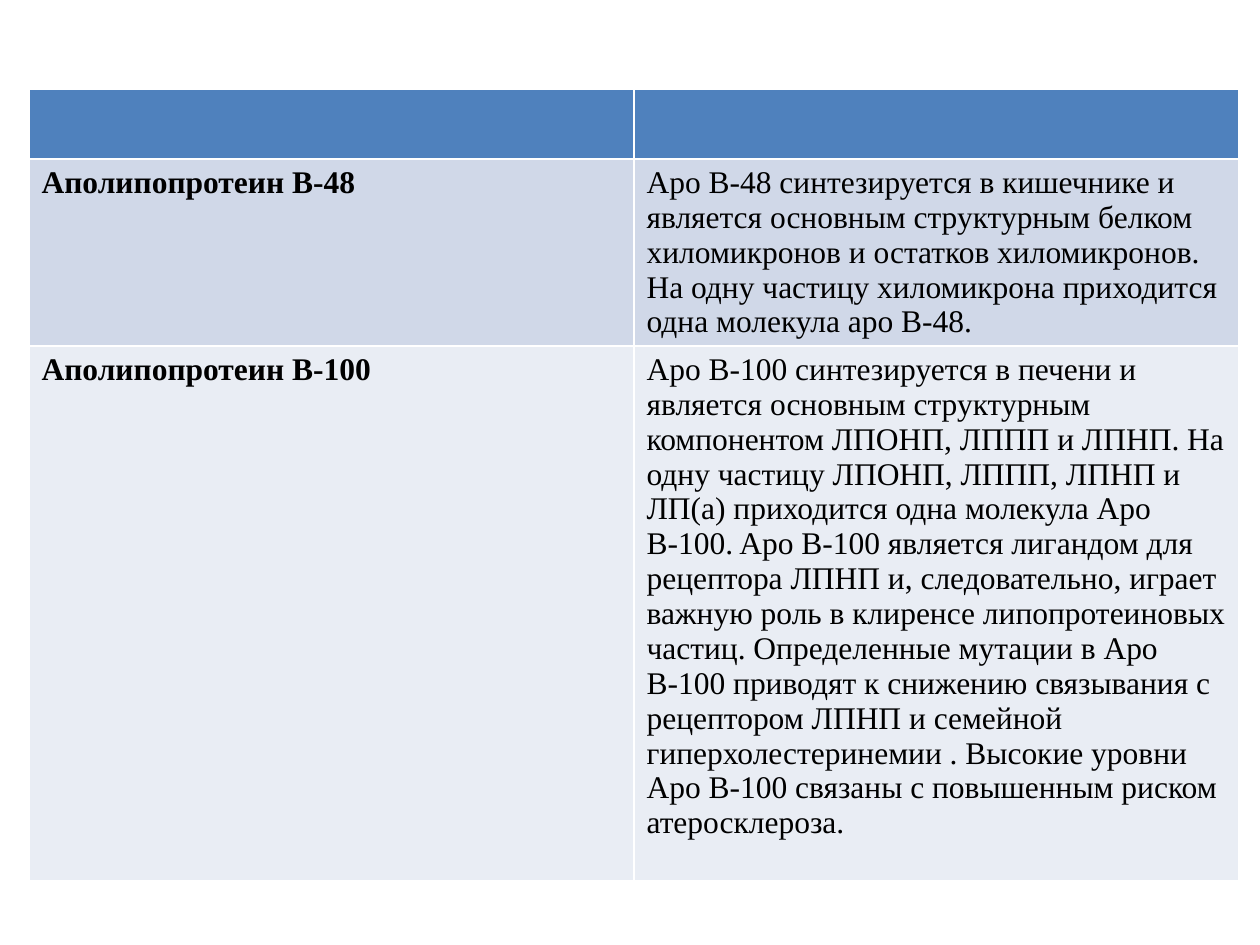
import pptx
import pptx.dml.color
import pptx.util

RGBColor = pptx.dml.color.RGBColor
BLACK = RGBColor(0x00, 0x00, 0x00)
HEADER_BLUE = RGBColor(0x4F, 0x81, 0xBD)
BAND_DARK = RGBColor(0xD0, 0xD8, 0xE8)
BAND_LIGHT = RGBColor(0xE9, 0xED, 0xF4)

# Row height in px, fill, (protein, description)
ROWS = [
    (70, HEADER_BLUE, ("", "")),
    (187, BAND_DARK, (
        "Аполипопротеин B-48",
        "Apo B-48 синтезируется в кишечнике и является основным структурным "
        "белком хиломикронов и остатков хиломикронов. На одну частицу "
        "хиломикрона приходится одна молекула apo B-48.",
    )),
    (535, BAND_LIGHT, (
        "Аполипопротеин В-100",
        "Apo B-100 синтезируется в печени и является основным структурным "
        "компонентом ЛПОНП, ЛППП и ЛПНП. На одну частицу ЛПОНП, ЛППП, ЛПНП и "
        "ЛП(а) приходится одна молекула Apo B-100. Apo B-100 является лигандом "
        "для рецептора ЛПНП и, следовательно, играет важную роль в клиренсе "
        "липопротеиновых частиц. Определенные мутации в Apo B-100 приводят к "
        "снижению связывания с рецептором ЛПНП и семейной "
        "гиперхолестеринемии . Высокие уровни Apo B-100 связаны с повышенным "
        "риском атеросклероза.",
    )),
]
FONT = {"name": "Times New Roman", "size": pptx.util.Pt(18)}
SLIDE_WIDTH, SLIDE_HEIGHT = 1260, 945
TABLE_LEFT, TABLE_TOP = 29, 89
COLUMN_WIDTH, COLUMN_COUNT = 605, 2


def px(length):
    return pptx.util.Emu(round(length * 914400 / 126))


def write_cell(cell, text, fill, bold):
    cell.fill.solid()
    cell.fill.fore_color.rgb = fill
    if not text:
        return
    run = cell.text_frame.paragraphs[0].add_run()
    run.text = text
    for attribute, value in {**FONT, "bold": bold}.items():
        setattr(run.font, attribute, value)
    run.font.color.rgb = BLACK


def main():
    deck = pptx.Presentation()
    deck.slide_width, deck.slide_height = px(SLIDE_WIDTH), px(SLIDE_HEIGHT)
    slide = deck.slides.add_slide(deck.slide_layouts.get_by_name("Blank"))

    table_height = sum(height for height, _, _ in ROWS)
    proteins = slide.shapes.add_table(
        len(ROWS), COLUMN_COUNT, px(TABLE_LEFT), px(TABLE_TOP),
        px(COLUMN_WIDTH * COLUMN_COUNT), px(table_height),
    ).table
    for row, (height, fill, texts) in zip(proteins.rows, ROWS):
        row.height = px(height)
        for column, (cell, text) in enumerate(zip(row.cells, texts)):
            write_cell(cell, text, fill, bold=column == 0)

    deck.save("out.pptx")


if __name__ == "__main__":
    main()
